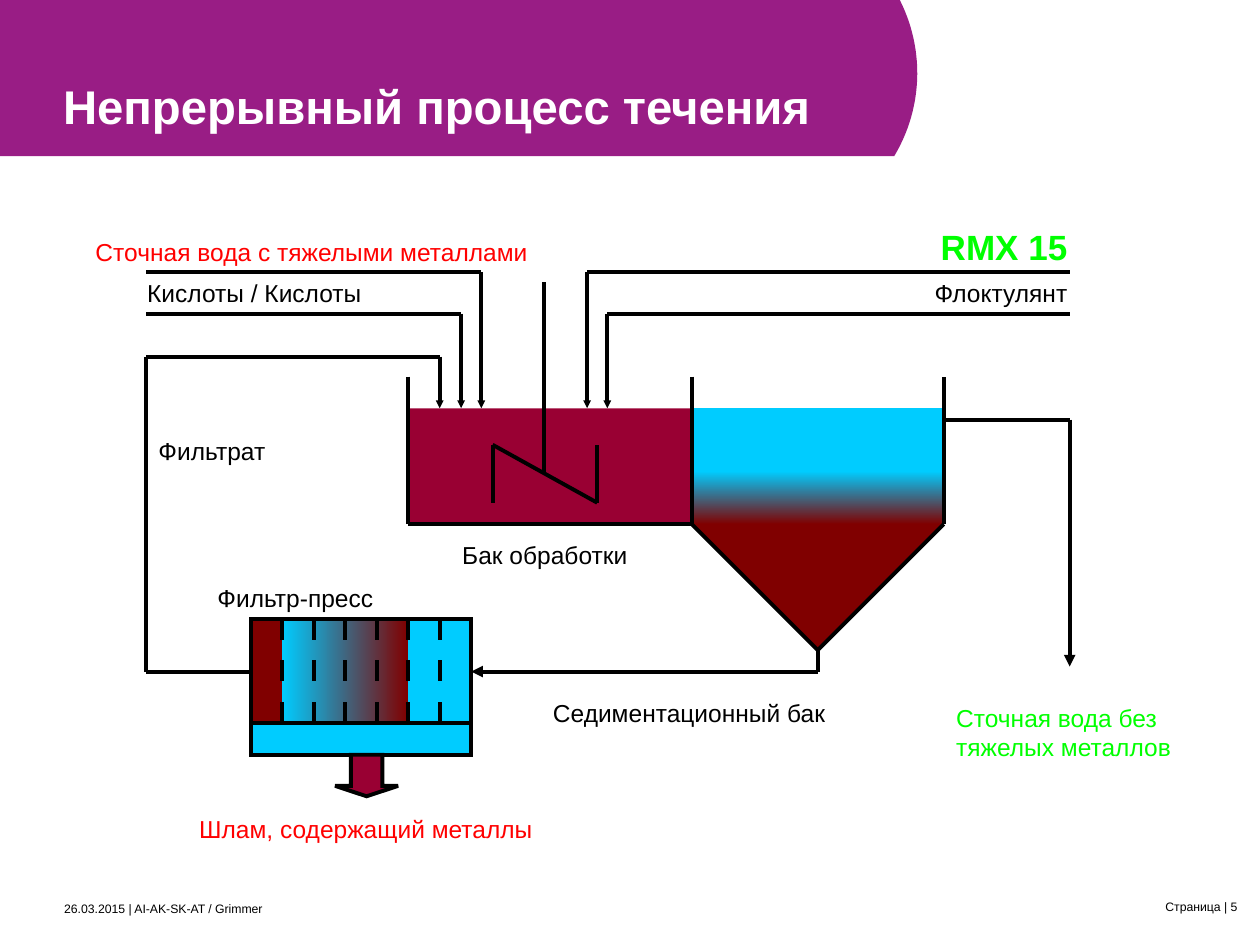
import math
from dataclasses import dataclass

from lxml import etree
from pptx import Presentation
from pptx.dml.color import RGBColor
from pptx.enum import shapes, text
from pptx.oxml import ns
from pptx.util import Inches, Pt


@dataclass(frozen=True)
class Theme:
    font: str = "Arial"
    banner: str = "991D85"
    black: str = "000000"
    white: str = "FFFFFF"
    red: str = "FF0000"
    green: str = "00FF00"
    water: str = "00CCFF"
    sludge: str = "800000"
    mixture: str = "990033"
    title: float = 27
    product: float = 20
    label: float = 14
    footer: float = 7
    stroke: float = 2.25


THEME = Theme()
SHAPE = shapes.MSO_SHAPE
ALIGN = text.PP_ALIGN

deck = Presentation()
deck.slide_width, deck.slide_height = Inches(10), Inches(7.5)
page = deck.slides.add_slide(deck.slide_layouts[6])


def add_label(words, left, top, width, height, color=THEME.black, size=THEME.label,
              bold=False, align=ALIGN.LEFT, anchor=text.MSO_ANCHOR.TOP,
              inset=True, wrap=True, fill=None):
    box = page.shapes.add_textbox(*map(Inches, (left, top, width, height)))
    if fill:
        box.fill.solid()
        box.fill.fore_color.rgb = RGBColor.from_string(fill)
    frame = box.text_frame
    frame.word_wrap = wrap
    frame.vertical_anchor = anchor
    if not inset:
        frame.margin_left = frame.margin_right = 0
        frame.margin_top = frame.margin_bottom = 0
    para = frame.paragraphs[0]
    para.alignment = align
    span = para.add_run()
    span.text = words
    span.font.name, span.font.size, span.font.bold = THEME.font, Pt(size), bold
    span.font.color.rgb = RGBColor.from_string(color)


def add_path(*points, head=None):
    """Join the points with straight lines; head is the arrowhead size at the last one."""
    for start, end in zip(points, points[1:]):
        line = page.shapes.add_connector(
            shapes.MSO_CONNECTOR.STRAIGHT, *map(Inches, (*start, *end)))
        line.line.width = Pt(THEME.stroke)
        line.line.color.rgb = RGBColor.from_string(THEME.black)
        if head and end == points[-1]:
            etree.SubElement(line.line._get_or_add_ln(), ns.qn("a:tailEnd"),
                             type="triangle", w=head, len=head)
        etree.SubElement(line._element.spPr, ns.qn("a:effectLst"))


# Banner whose right edge is an arc of a circle
center_x, center_y, radius, banner_height, steps = 6.0, 0.58, 1.28, 1.24, 40
arc = []
for step in range(steps + 1):
    y = banner_height * step / steps
    x = center_x + math.sqrt(radius ** 2 - (y - center_y) ** 2)
    arc.append((Inches(x), Inches(y)))
builder = page.shapes.build_freeform(0, 0)
builder.add_line_segments([*arc, (0, Inches(banner_height))], close=True)
banner = builder.convert_to_shape()
banner.shadow.inherit = False
banner.fill.solid()
banner.fill.fore_color.rgb = RGBColor.from_string(THEME.banner)
banner.line.fill.background()

# Pipes into and out of the tanks
left_end, right_end, liquid = 1.16, 8.49, 3.24
for outer, inner, level in [(left_end, 3.66, 2.49), (left_end, 3.82, 2.16),
                            (right_end, 4.66, 2.16), (right_end, 4.82, 2.49)]:
    add_path((outer, level), (inner, level), (inner, liquid), head="sm")
add_path((1.99, 5.33), (left_end, 5.33), (left_end, 2.83), (3.49, 2.83),
         (3.49, liquid), head="sm")
add_path((6.49, 5.16), (6.49, 5.33), (3.74, 5.33), head="med")
add_path((7.49, 3.33), (right_end, 3.33), (right_end, 5.29), head="med")

# Filled parts: kind, position, one colour or a gradient pair, gradient angle
press_left, press_top, press_floor, cell = 1.99, 4.91, 5.74, 0.25
press_height = press_floor - press_top
parts = [
    (SHAPE.RECTANGLE, (3.24, liquid, 2.25, 0.92), [THEME.mixture], 0),
    (SHAPE.RECTANGLE, (5.49, liquid, 2, 0.5), [THEME.water], 0),
    (SHAPE.RECTANGLE, (5.49, 3.74, 2, 0.42), [THEME.water, THEME.sludge], 270),
    (SHAPE.FLOWCHART_MERGE, (5.49, 4.16, 2, 1), [THEME.sludge], 0),
    (SHAPE.RECTANGLE, (press_left, press_top, cell, press_height), [THEME.sludge], 0),
    (SHAPE.RECTANGLE, (press_left + cell, press_top, 4 * cell, press_height),
     [THEME.water, THEME.sludge], 0),
    (SHAPE.RECTANGLE, (press_left + 5 * cell, press_top, 2 * cell, press_height),
     [THEME.water], 0),
    (SHAPE.RECTANGLE, (press_left, press_floor, 7 * cell, cell), [THEME.water], 0),
    (SHAPE.RECTANGLE, (press_left, press_top, 7 * cell, press_height + cell), [], 0),
    (SHAPE.DOWN_ARROW, (2.66, 5.99, 0.5, 0.33), [THEME.mixture], 0),
]
for kind, place, colors, angle in parts:
    part = page.shapes.add_shape(kind, *map(Inches, place))
    part.shadow.inherit = False
    if len(colors) == 2:
        part.fill.gradient()
        part.fill.gradient_angle = angle
        for stop, color in zip(part.fill.gradient_stops, colors):
            stop.color.rgb = RGBColor.from_string(color)
    elif colors:
        part.fill.solid()
        part.fill.fore_color.rgb = RGBColor.from_string(colors[0])
    else:
        part.fill.background()
    if kind == SHAPE.DOWN_ARROW:
        part.adjustments[0], part.adjustments[1] = 0.5, 0.25
    if kind == SHAPE.DOWN_ARROW or not colors:
        part.line.width = Pt(THEME.stroke)
        part.line.color.rgb = RGBColor.from_string(THEME.black)
        etree.SubElement(part.line._get_or_add_ln(), ns.qn("a:miter"), lim="800000")
    else:
        part.line.fill.background()

# Tank walls and stirrer
add_path((3.24, 2.99), (3.24, 4.16), (5.49, 4.16))
add_path((5.49, 2.99), (5.49, 4.16), (6.49, 5.16), (7.49, 4.16), (7.49, 2.99))
add_path((4.32, 2.24), (4.32, 3.76))
add_path((3.91, 3.99), (3.91, 3.53), (4.74, 3.99), (4.74, 3.53))

# Press floor and dashed plates
add_path((press_left, press_floor), (press_left + 7 * cell, press_floor))
dash = press_height / 5
for plate in range(1, 7):
    x = press_left + plate * cell
    for row in range(3):
        y = press_top + 2 * row * dash
        add_path((x, y), (x, y + dash))

# Labels
add_label("Сточная вода с тяжелыми металлами", 0.66, 1.83, 3.94, 0.34, color=THEME.red)
add_label("Кислоты / Кислоты", 1.07, 2.16, 2.03, 0.34)
add_label("RMX 15", 7.07, 1.74, 1.5, 0.43, color=THEME.green, size=THEME.product,
          bold=True, align=ALIGN.RIGHT)
add_label("Флоктулянт", 7.24, 2.16, 1.33, 0.33, align=ALIGN.RIGHT)
add_label("Фильтрат", 1.16, 3.41, 1.33, 0.33)
add_label("Бак обработки", 3.57, 4.24, 1.58, 0.33)
add_label("Фильтр-пресс", 1.21, 4.58, 2.27, 0.34, align=ALIGN.CENTER)
add_label("Седиментационный бак", 4.29, 5.49, 3.04, 0.34)
add_label("Сточная вода без тяжелых металлов", 7.49, 5.53, 2, 0.57,
          color=THEME.green, fill=THEME.white)
add_label("Шлам, содержащий металлы", 1.32, 6.41, 3.17, 0.33,
          color=THEME.red, align=ALIGN.CENTER, fill=THEME.white)

# Title and footer
add_label("Непрерывный процесс течения", 0.5, 0.12, 6.55, 0.94, color=THEME.white,
          size=THEME.title, bold=True, anchor=text.MSO_ANCHOR.BOTTOM, inset=False)
add_label("26.03.2015 | AI-AK-SK-AT / Grimmer", 0.51, 7.15, 4.96, 0.12,
          size=THEME.footer, inset=False, wrap=False)
add_label("Страница | 5", 9.25, 7.14, 0.63, 0.12,
          size=THEME.footer, inset=False, wrap=False)

deck.save("out.pptx")
